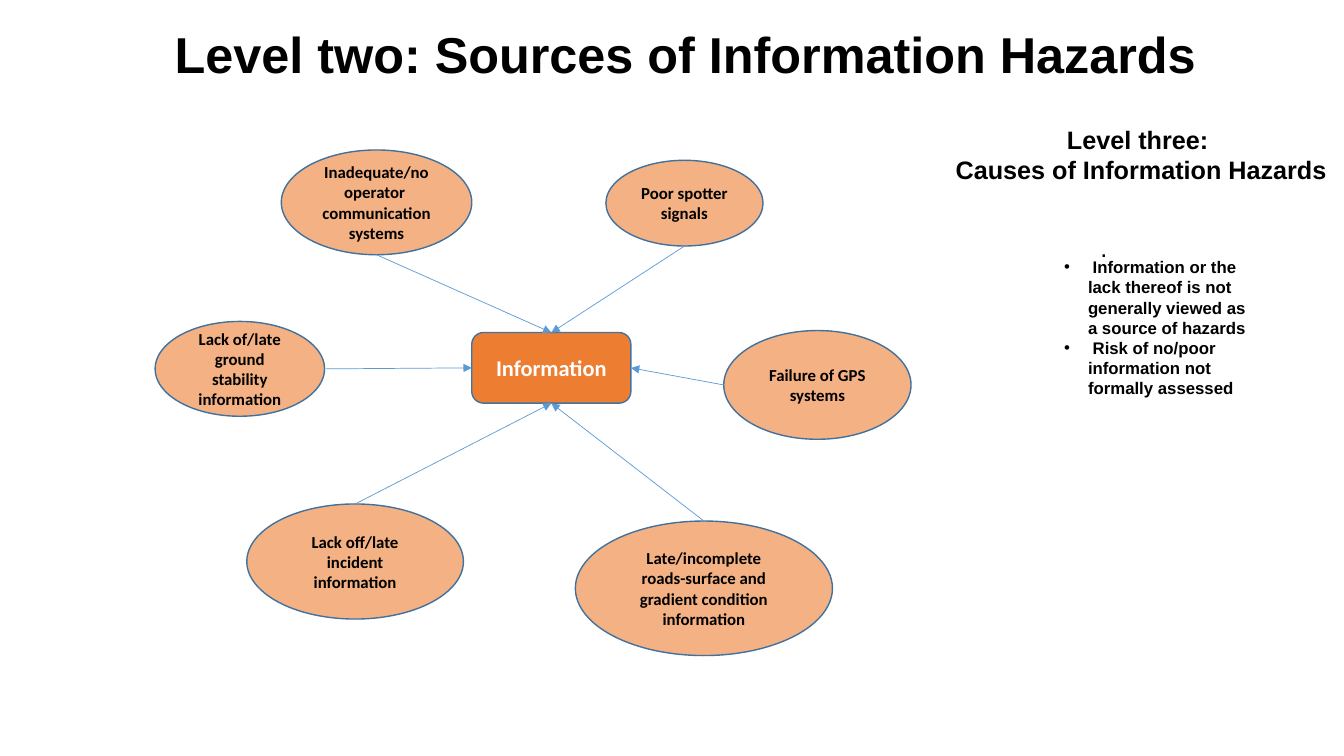
from lxml import etree
from pptx import Presentation
from pptx.dml.color import RGBColor as Rgb
from pptx.enum.shapes import MSO_CONNECTOR as Conn, MSO_SHAPE as Kind
from pptx.enum.text import MSO_ANCHOR as Anchor, MSO_AUTO_SIZE as Fit, PP_ALIGN as Align
from pptx.oxml.ns import qn
from pptx.util import Cm, Pt

COLORS = {
    "ink": "000000", "white": "FFFFFF",
    "hub": "ED7D31", "hub_edge": "43739E",
    "cause": "F4B183", "edge": "41719C", "arrow": "5B9BD5",
}

# Box in cm, side the arrow leaves from, side of the hub it meets, lines
CAUSES = [
    ((15.27, 4.04, 3.96, 2.16), "bottom", "top", ["Poor spotter", "signals"]),
    ((6.22, 12.7, 5.46, 2.9), "top", "bottom", ["Lack off/late incident information"]),
    ((7.09, 3.78, 4.8, 2.64), "bottom", "top",
     ["Inadequate/no operator ", "communication", "systems"]),
    ((3.91, 8.1, 4.27, 2.39), "right", "left", ["Lack of/late ground stability information"]),
    ((18.24, 8.33, 4.72, 2.74), "left", "right", ["Failure of GPS systems"]),
    ((14.5, 13.13, 6.48, 3.39), "top", "bottom",
     ["Late/incomplete roads-surface and gradient condition information"]),
]
SIDES = {"top": (0.5, 0), "bottom": (0.5, 1), "left": (0, 0.5), "right": (1, 0.5)}


def color(name):
    return Rgb.from_string(COLORS[name])


def write(frame, lines, size=12, font="Arial", ink="ink", bold=True,
          align=Align.CENTER, anchor=Anchor.TOP, wrap=True, bullet=None):
    """Fill a text frame, one paragraph a line."""
    frame.word_wrap = wrap
    frame.auto_size = Fit.NONE
    frame.vertical_anchor = anchor
    for i, line in enumerate(lines):
        para = frame.add_paragraph() if i else frame.paragraphs[0]
        para.alignment = align
        run = para.add_run()
        run.text = line
        run.font.size, run.font.name, run.font.bold = Pt(size), font, bold
        run.font.color.rgb = color(ink)
        if bullet:
            props = para._p.get_or_add_pPr()
            props.set("marL", str(Cm(0.6)))
            props.set("indent", str(-Cm(0.6)))
            etree.SubElement(props, qn("a:buFont")).set("typeface", "Arial")
            etree.SubElement(props, qn("a:buChar")).set("char", bullet)


def add_node(slide, kind, box, lines, fill, edge, **style):
    node = slide.shapes.add_shape(kind, *map(Cm, box))
    node.shadow.inherit = False
    node.fill.solid()
    node.fill.fore_color.rgb = color(fill)
    node.line.color.rgb = color(edge)
    node.line.width = Pt(1)
    write(node.text_frame, lines, font="Calibri", anchor=Anchor.MIDDLE, **style)
    return node


def add_text(slide, box, lines, **style):
    write(slide.shapes.add_textbox(*map(Cm, box)).text_frame, lines, **style)


def side_point(node, side):
    across, down = SIDES[side]
    return int(node.left + across * node.width), int(node.top + down * node.height)


def add_arrow(slide, start, end):
    arrow = slide.shapes.add_connector(Conn.STRAIGHT, *start, *end)
    arrow.line.color.rgb = color("arrow")
    arrow.line.width = Pt(0.5)
    etree.SubElement(arrow.line._get_or_add_ln(), qn("a:tailEnd")).set("type", "triangle")
    etree.SubElement(arrow._element.spPr, qn("a:effectLst"))


def main():
    deck = Presentation()
    deck.slide_width, deck.slide_height = Cm(33.87), Cm(19.05)
    slide = deck.slides.add_slide(deck.slide_layouts[5])

    # Title
    title = slide.shapes.title
    title.left, title.top, title.width, title.height = map(Cm, (1.47, 0.46, 31.62, 1.8))
    write(title.text_frame, ["Level two: Sources of Information Hazards"], size=36)

    # Hub with the hazard sources around it
    hub = add_node(slide, Kind.ROUNDED_RECTANGLE, (11.89, 8.38, 4.01, 1.78),
                   ["Information"], "hub", "hub_edge", size=16, ink="white")
    for box, leave, meet, lines in CAUSES:
        node = add_node(slide, Kind.OVAL, box, lines, "cause", "edge")
        add_arrow(slide, side_point(node, leave), side_point(hub, meet))

    # Causes on the right
    add_text(slide, (22.17, 3, 13.18, 1.8),
             ["Level three: ", "Causes of Information Hazards"], size=18)
    add_text(slide, (27.48, 5.72, 0.69, 1.02), ["."], size=18, bold=False,
             align=Align.LEFT, wrap=False)
    add_text(slide, (26.57, 6.35, 5.11, 3.84),
             [" Information or the lack thereof is not generally viewed as a source of hazards",
              " Risk of no/poor information not formally assessed"],
             align=Align.LEFT, bullet="•")

    deck.save("out.pptx")


if __name__ == "__main__":
    main()
